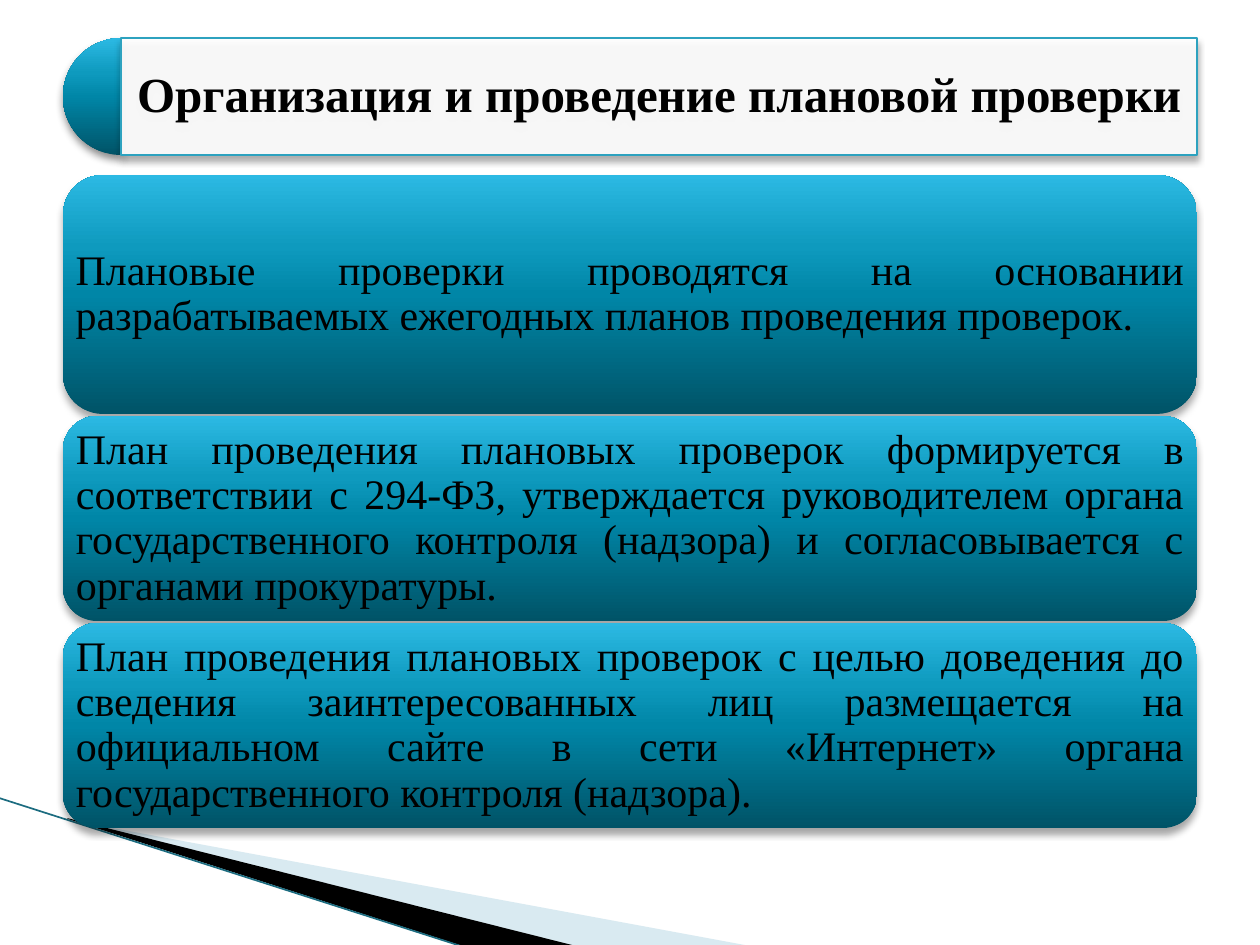
from lxml.etree import SubElement
from pptx import Presentation
from pptx.dml.color import RGBColor
from pptx.enum.shapes import MSO_CONNECTOR as CONNECTOR, MSO_SHAPE as SHAPE
from pptx.enum.text import MSO_ANCHOR as ANCHOR, MSO_AUTO_SIZE as AUTO_SIZE, PP_ALIGN as ALIGN
from pptx.oxml.ns import qn
from pptx.util import Pt

PX = 914400 / 126
BLACK = RGBColor(0x00, 0x00, 0x00)
WHITE = RGBColor(0xFF, 0xFF, 0xFF)
PALE_BLUE = RGBColor(0xA0, 0xCB, 0xDC)
EDGE_TEAL = RGBColor(0x1C, 0x6C, 0x80)
BORDER_TEAL = RGBColor(0x2D, 0xA2, 0xBF)
GRADIENT = (
    (0, RGBColor(0x00, 0x53, 0x67)),
    (50, RGBColor(0x00, 0x86, 0xA7)),
    (70, RGBColor(0x0E, 0x9A, 0xBE)),
    (100, RGBColor(0x2C, 0xB9, 0xE3)),
)

LEFT, WIDTH = 63, 1134
TITLE_TOP, TITLE_HEIGHT = 38, 117
PANEL_TOP, PANEL_GAP, PANEL_INSET = 175, 2, 13
ROUND_TEXT_INSET = 0.0488
TITLE = "Организация и проведение плановой проверки"
PANELS = (
    (239, "Плановые проверки проводятся на основании разрабатываемых ежегодных планов "
          "проведения проверок."),
    (205, "План проведения плановых проверок формируется в соответствии с 294-ФЗ, "
          "утверждается руководителем органа государственного контроля (надзора) "
          "и согласовывается с органами прокуратуры."),
    (205, "План проведения плановых проверок с целью доведения до сведения "
          "заинтересованных лиц размещается на официальном сайте в сети «Интернет» "
          "органа государственного контроля (надзора)."),
)


def px(value):
    return round(value * PX)


def apply(target, values):
    for name, value in values.items():
        setattr(target, name, value)


def set_alpha(shape, percent):
    color = shape.fill._xPr.find(qn("a:solidFill"))[0]
    SubElement(color, qn("a:alpha"), val=str(percent * 1000))


def set_shadow(shape, opacity=35, blur=4, distance=3):
    shape.shadow.inherit = False
    effects = shape.element.spPr.find(qn("a:effectLst"))
    shadow = SubElement(effects, qn("a:outerShdw"), blurRad=str(Pt(blur)),
                        dist=str(Pt(distance)), dir="5400000", rotWithShape="0")
    color = SubElement(shadow, qn("a:srgbClr"), val=str(BLACK))
    SubElement(color, qn("a:alpha"), val=str(opacity * 1000))


def set_gradient(shape):
    shape.fill.gradient()
    shape.fill.gradient_angle = 90
    stops = shape.element.spPr.find(".//" + qn("a:gsLst"))
    for stop in list(stops):
        stops.remove(stop)
    for position, color in GRADIENT:
        stop = SubElement(stops, qn("a:gs"), pos=str(position * 1000))
        SubElement(stop, qn("a:srgbClr"), val=str(color))


def set_text(shape, text, size, align, inset_x, inset_y, bold=False):
    frame = shape.text_frame
    frame.text = text
    apply(frame, {
        "word_wrap": True, "auto_size": AUTO_SIZE.NONE, "vertical_anchor": ANCHOR.MIDDLE,
        "margin_left": px(inset_x), "margin_right": px(inset_x),
        "margin_top": px(inset_y), "margin_bottom": px(inset_y),
    })
    paragraph = frame.paragraphs[0]
    apply(paragraph, {"alignment": align, "line_spacing": 0.9})
    font = paragraph.runs[0].font
    apply(font, {"name": "Times New Roman", "size": Pt(size), "bold": bold})
    font.color.rgb = BLACK


def add_wedge(slide, points, color, alpha=100):
    builder = slide.shapes.build_freeform(*points[0], scale=PX)
    builder.add_line_segments(points[1:], close=True)
    shape = builder.convert_to_shape()
    shape.shadow.inherit = False
    shape.fill.solid()
    shape.fill.fore_color.rgb = color
    shape.line.fill.background()
    set_alpha(shape, alpha)


def add_edge(slide, start, end):
    line = slide.shapes.add_connector(CONNECTOR.STRAIGHT, *map(px, start + end))
    line.line.color.rgb = EDGE_TEAL
    line.line.width = Pt(0.95)
    SubElement(line.element.spPr, qn("a:effectLst"))


def add_gradient_shape(slide, kind, left, top, width, height, opacity=35, blur=4):
    shape = slide.shapes.add_shape(kind, *map(px, (left, top, width, height)))
    set_gradient(shape)
    shape.line.fill.background()
    set_shadow(shape, opacity, blur)
    return shape


def add_panel(slide, top, height, text):
    panel = add_gradient_shape(slide, SHAPE.ROUNDED_RECTANGLE, LEFT, top, WIDTH, height)
    inset = PANEL_INSET - round(height * ROUND_TEXT_INSET)
    set_text(panel, text, 24, ALIGN.JUSTIFY, inset, inset)


def add_title(slide):
    half_disc = add_gradient_shape(slide, SHAPE.PIE, LEFT, TITLE_TOP,
                                   TITLE_HEIGHT, TITLE_HEIGHT, 45, 5)
    half_disc.adjustments[0] = 54
    half_disc.adjustments[1] = 162

    title = slide.shapes.title
    title.element.getparent().append(title.element)
    radius = TITLE_HEIGHT // 2
    apply(title, {"left": px(LEFT + radius), "top": px(TITLE_TOP),
                  "width": px(WIDTH - radius), "height": px(TITLE_HEIGHT)})
    title.fill.solid()
    title.fill.fore_color.rgb = WHITE
    set_alpha(title, 90)
    title.line.color.rgb = BORDER_TEAL
    title.line.width = Pt(0.75)
    set_shadow(title)
    set_text(title, TITLE, 28, ALIGN.CENTER, 15, 15, bold=True)


def main():
    presentation = Presentation()
    apply(presentation, {"slide_width": px(1260), "slide_height": px(945)})
    slide = presentation.slides.add_slide(presentation.slide_layouts[5])

    add_wedge(slide, [(69, 820), (750, 946), (575, 946), (69, 819)], PALE_BLUE, 40)
    add_wedge(slide, [(67, 818), (576, 946), (469, 948), (68, 819)], BLACK)
    add_edge(slide, (-1, 798), (467, 948))

    top = PANEL_TOP
    for height, text in PANELS:
        add_panel(slide, top, height, text)
        top += height + PANEL_GAP
    add_title(slide)
    presentation.save("out.pptx")


if __name__ == "__main__":
    main()
